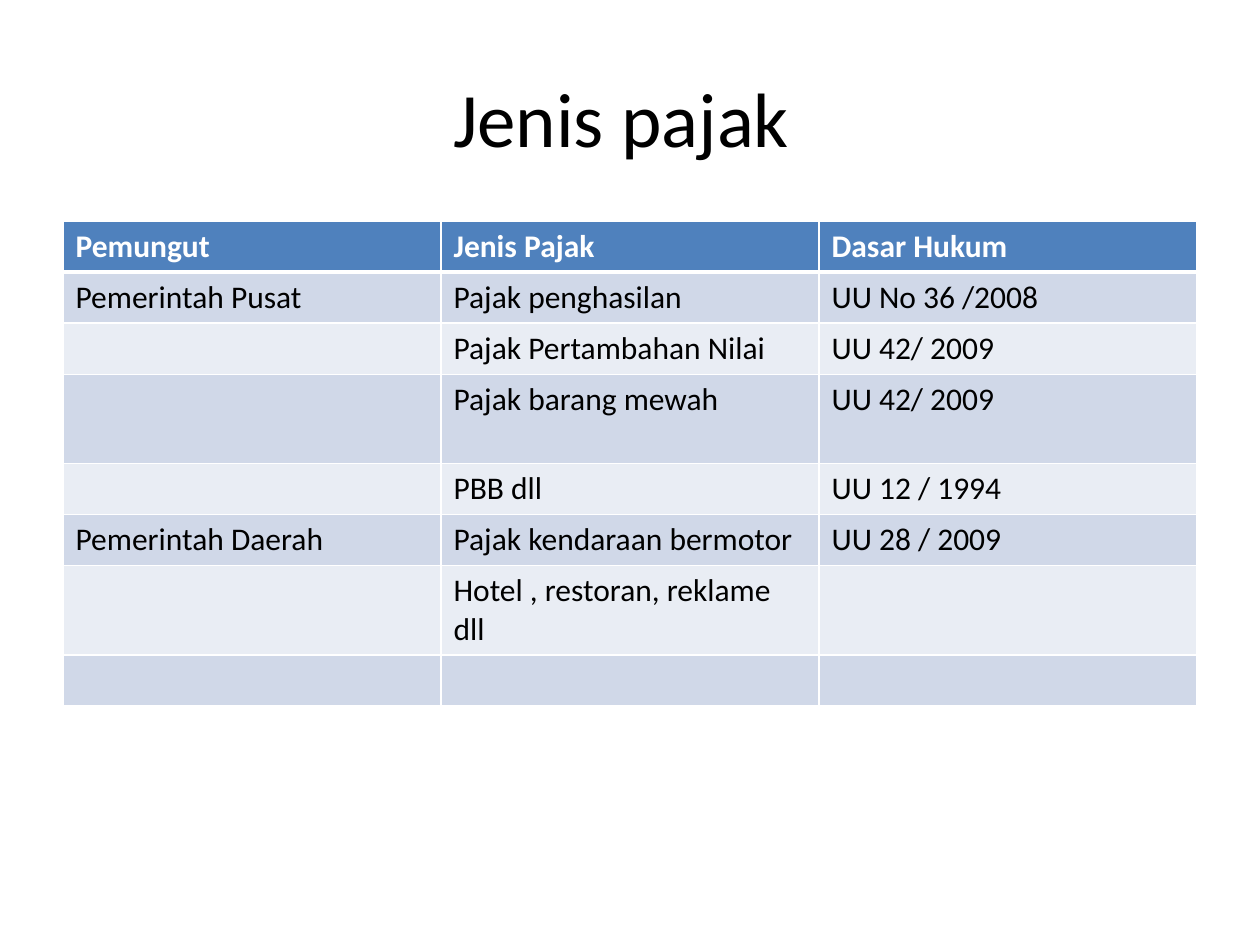
from lxml.etree import SubElement
from pptx import Presentation
from pptx.dml.color import RGBColor
from pptx.enum.text import MSO_ANCHOR, PP_ALIGN
from pptx.oxml.ns import qn
from pptx.util import Inches, Pt

SCALE = Inches(1) / 126
FONT = "Calibri"
WHITE, BLACK, BLUE = "FFFFFF", "000000", "4F81BD"
BANDS = ("D0D8E8", "E9EDF4")
ROW, TALL = 51, 89
ROWS = [
    (ROW, "Pemungut", "Jenis Pajak", "Dasar Hukum"),
    (ROW, "Pemerintah Pusat", "Pajak penghasilan", "UU No 36 /2008"),
    (ROW, "", "Pajak Pertambahan Nilai", "UU 42/ 2009"),
    (TALL, "", "Pajak barang mewah", "UU 42/ 2009"),
    (ROW, "", "PBB dll", "UU 12 / 1994"),
    (ROW, "Pemerintah Daerah", "Pajak kendaraan bermotor", "UU 28 / 2009"),
    (TALL, "", "Hotel , restoran, reklame dll", ""),
    (ROW, "", "", ""),
]


def px(size):
    """Turn pixels into EMU."""
    return round(size * SCALE)


def color(code):
    """Turn a hex string into a colour."""
    return RGBColor.from_string(code)


def write(para, text, size, code, bold=False):
    """Add one formatted run to a paragraph."""
    run = para.add_run()
    run.text = text
    font = run.font
    font.name, font.size, font.bold = FONT, Pt(size), bold
    font.color.rgb = color(code)


def title(slide, text, box):
    """Place and fill the title."""
    shape = slide.shapes.title
    shape.left, shape.top, shape.width, shape.height = map(px, box)
    frame = shape.text_frame
    frame.word_wrap = True
    frame.vertical_anchor = MSO_ANCHOR.MIDDLE
    para = frame.paragraphs[0]
    para.alignment = PP_ALIGN.CENTER
    write(para, text, 44, BLACK)


def border(cell, top, bottom):
    """Draw white cell borders with the given top and bottom widths."""
    props = cell._tc.get_or_add_tcPr()
    for side, width in zip("LRTB", (1, 1, top, bottom)):
        line = SubElement(props, qn(f"a:ln{side}"), w=str(Pt(width)))
        fill = SubElement(line, qn("a:solidFill"))
        SubElement(fill, qn("a:srgbClr"), val=WHITE)


def table(slide, left, top, width):
    """Build the tax table with a header and banded rows."""
    high = sum(row[0] for row in ROWS)
    frame = slide.shapes.add_table(
        len(ROWS), 3, px(left), px(top), px(width), px(high))
    grid = frame.table
    for col in grid.columns:
        col.width = px(width / 3)
    for i, (tall, *texts) in enumerate(ROWS):
        grid.rows[i].height = px(tall)
        head = i == 0
        for j, text in enumerate(texts):
            cell = grid.cell(i, j)
            border(cell, 3 if i == 1 else 1, 3 if head else 1)
            cell.fill.solid()
            cell.fill.fore_color.rgb = color(BLUE if head else BANDS[(i - 1) % 2])
            para = cell.text_frame.paragraphs[0]
            if text:
                write(para, text, 18, WHITE if head else BLACK, head)


def main():
    """Build and save the slide."""
    deck = Presentation()
    deck.slide_width, deck.slide_height = px(1260), px(945)
    slide = deck.slides.add_slide(deck.slide_layouts[5])
    title(slide, "Jenis pajak ", (63, 38, 1134, 158))
    table(slide, 63, 221, 1134)
    deck.save("out.pptx")


if __name__ == "__main__":
    main()
